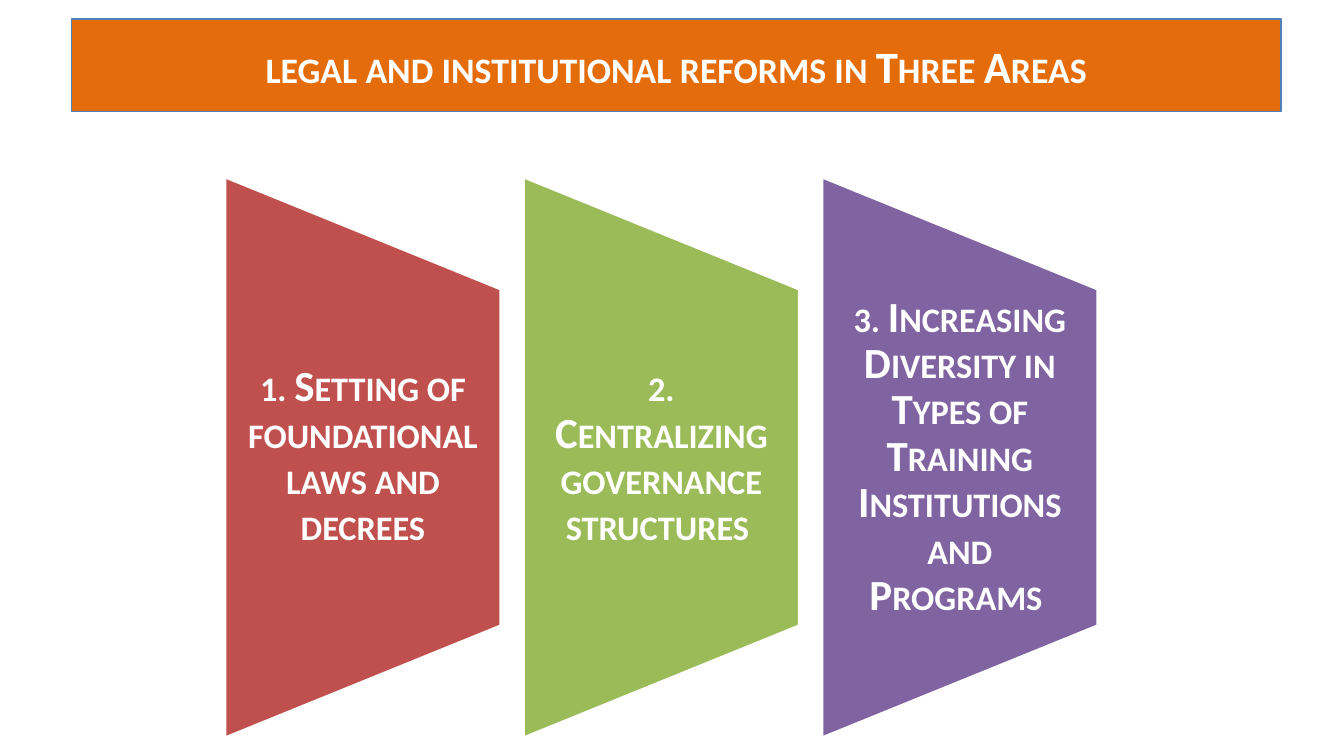
from pptx import Presentation
from pptx.dml.color import RGBColor
from pptx.enum.shapes import MSO_SHAPE
from pptx.enum.text import MSO_ANCHOR, PP_ALIGN
from pptx.util import Cm, Pt

RECT = MSO_SHAPE.RECTANGLE
TRAPEZOID = MSO_SHAPE.FLOWCHART_MANUAL_OPERATION
MIDDLE = MSO_ANCHOR.MIDDLE
CENTER = PP_ALIGN.CENTER

FONT = "Calibri"
COLORS = {
    "white": "FFFFFF",
    "orange": "E46C0A",
    "blue": "4F81BD",
    "red": "C0504D",
    "green": "9BBB59",
    "purple": "8064A2",
}

AREAS = [
    ("1. Setting of foundational laws and decrees", "red"),
    ("2. Centralizing governance structures ", "green"),
    ("3. Increasing Diversity in Types of Training Institutions and Programs ",
     "purple"),
]

# Panel geometry in cm; the trapezoids are turned, so length runs vertically
FIRST_X, CENTER_Y, PITCH = 6.86, 8.64, 5.64
LENGTH, WIDTH, TEXT_HEIGHT = 10.62, 5.23, 6.38


def rgb(name):
    return RGBColor.from_string(COLORS[name])


def add_block(slide, kind, x, y, w, h, fill, line, line_width):
    sp = slide.shapes.add_shape(kind, Cm(x), Cm(y), Cm(w), Cm(h))
    sp.shadow.inherit = False
    sp.fill.solid()
    sp.fill.fore_color.rgb = rgb(fill)
    sp.line.color.rgb = rgb(line)
    sp.line.width = Pt(line_width)
    return sp


def write_caps(sp, text, size):
    """Centred bold white text in small capitals."""
    tf = sp.text_frame
    tf.word_wrap = True
    tf.vertical_anchor = MIDDLE
    p = tf.paragraphs[0]
    p.alignment = CENTER
    r = p.add_run()
    r.text = text
    r.font.name = FONT
    r.font.size = Pt(size)
    r.font.bold = True
    r.font.color.rgb = rgb("white")
    r.font._element.set("cap", "small")
    return tf


def add_panel(slide, center_x, text, fill):
    # Turned trapezoid
    sp = add_block(slide, TRAPEZOID, center_x - LENGTH / 2,
                   CENTER_Y - WIDTH / 2, LENGTH, WIDTH, fill, "white", 2)
    sp.rotation = 270

    # Upright label over it
    label = slide.shapes.add_textbox(
        Cm(center_x - WIDTH / 2), Cm(CENTER_Y - TEXT_HEIGHT / 2),
        Cm(WIDTH), Cm(TEXT_HEIGHT))
    tf = write_caps(label, text, 23)
    tf.margin_left = tf.margin_right = Cm(0.41)
    tf.margin_top = tf.margin_bottom = 0
    tf.paragraphs[0].line_spacing = 0.9


def main():
    prs = Presentation()
    prs.slide_width, prs.slide_height = Cm(25.4), Cm(14.28)
    s = prs.slides.add_slide(prs.slide_layouts[6])

    # Title bar
    title = add_block(s, RECT, 1.35, 0.36, 22.86, 1.75, "orange", "blue", 0.75)
    write_caps(title, "legal and institutional reforms in Three Areas", 24)

    # Three reform areas
    for i, (text, fill) in enumerate(AREAS):
        add_panel(s, FIRST_X + i * PITCH, text, fill)

    prs.save("out.pptx")


if __name__ == "__main__":
    main()
